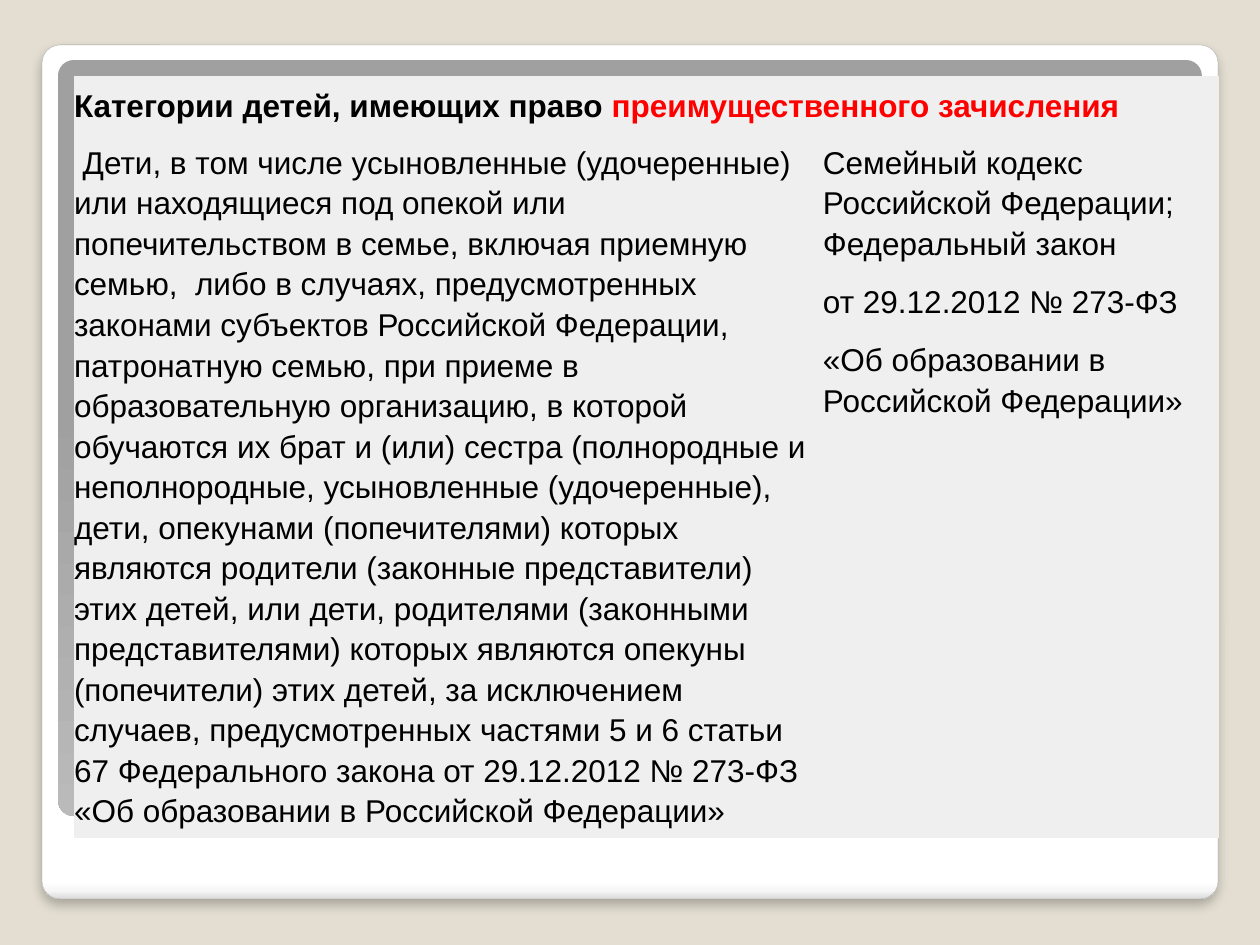
"""Build a slide with a framed table on preferential school enrolment."""
from dataclasses import dataclass

from lxml.etree import SubElement
from pptx import Presentation
from pptx.dml.color import RGBColor as RGB
from pptx.enum.shapes import MSO_SHAPE as Shape
from pptx.oxml.ns import qn
from pptx.util import Pt

SCALE = 914400 / 126
NO_GRID_STYLE = "{2D5ABB26-0587-4C30-8999-92F81FD0307C}"


@dataclass(frozen=True)
class Theme:
    background: str = "E3DED1"
    outline: str = "A4A4A4"
    cell: str = "EFEFEF"
    text: str = "000000"
    accent: str = "FF0000"
    shadow: str = "000000"
    font: str = "Arial"
    size: int = 18


THEME = Theme()


@dataclass(frozen=True)
class Panel:
    box: tuple[int, int, int, int]
    stops: tuple[tuple[int, str], ...]
    outlined: bool


@dataclass(frozen=True)
class Run:
    text: str
    color: str = THEME.text
    bold: bool = False


@dataclass(frozen=True)
class CellText:
    row: int
    col: int
    left: int
    right: int
    paragraphs: tuple[tuple[Run, ...], ...]


PANELS = (
    Panel((42, 45, 1176, 854),
          ((0, "FFFFFF"), (98, "FFFFFF"), (99, "F7F7F7"), (100, "DADADA")), True),
    Panel((58, 60, 1144, 756),
          ((0, "A0A0A0"), (50, "A2A2A2"), (100, "BABABA")), False),
)
TABLE_BOX = (74, 76, 1145, 757)
COLUMNS = (745, 400)
ROWS = (48, 641)
CELLS = (
    CellText(0, 0, 0, 0, ((
        Run("Категории детей, имеющих право ", bold=True),
        Run("преимущественного зачисления", THEME.accent, True)),)),
    CellText(1, 0, 0, 4, ((Run(
        " Дети, в том числе усыновленные (удочеренные) или находящиеся под опекой "
        "или попечительством в семье, включая приемную семью,  либо в случаях, "
        "предусмотренных законами субъектов Российской Федерации, патронатную "
        "семью, при приеме в образовательную организацию, в которой обучаются их "
        "брат и (или) сестра (полнородные и неполнородные, усыновленные "
        "(удочеренные), дети, опекунами (попечителями) которых являются родители "
        "(законные представители) этих детей, или дети, родителями (законными "
        "представителями) которых являются опекуны (попечители) этих детей, за "
        "исключением случаев, предусмотренных частями 5 и 6 статьи 67 "
        "Федерального закона от 29.12.2012 № 273-ФЗ «Об образовании в "
        "Российской Федерации»"),),)),
    CellText(1, 1, 4, 0, (
        (Run("Семейный кодекс Российской Федерации; Федеральный закон"),),
        (Run("от 29.12.2012 № 273-ФЗ"),),
        (Run("«Об образовании в Российской Федерации»"),))),
)


def px(length: int) -> int:
    """Turn pixels into EMU."""
    return round(length * SCALE)


def apply(target, values: dict) -> None:
    """Set each named attribute on the target."""
    for name, value in values.items():
        setattr(target, name, value)


def set_gradient(sp, stops: tuple[tuple[int, str], ...]) -> None:
    """Fill a shape from top to bottom with the given stops."""
    sp.fill.gradient()
    grad = sp._element.spPr.find(qn("a:gradFill"))
    for child in list(grad):
        grad.remove(child)
    gs_list = SubElement(grad, qn("a:gsLst"))
    for position, color in stops:
        gs = SubElement(gs_list, qn("a:gs"), pos=str(position * 1000))
        SubElement(gs, qn("a:srgbClr"), val=color)
    SubElement(grad, qn("a:lin"), ang="5400000", scaled="0")


def add_shadow(sp) -> None:
    """Give a shape a soft shadow below it."""
    effects = sp._element.spPr.find(qn("a:effectLst"))
    shadow = SubElement(effects, qn("a:outerShdw"), blurRad=str(Pt(6)),
                        dist=str(Pt(4)), dir="5400000", rotWithShape="0")
    color = SubElement(shadow, qn("a:srgbClr"), val=THEME.shadow)
    SubElement(color, qn("a:alpha"), val="25000")


def draw_panel(s, panel: Panel) -> None:
    """Draw one rounded panel."""
    sp = s.shapes.add_shape(Shape.ROUNDED_RECTANGLE, *map(px, panel.box))
    sp.adjustments[0] = 0.021
    sp.shadow.inherit = False
    set_gradient(sp, panel.stops)
    if panel.outlined:
        sp.line.color.rgb = RGB.from_string(THEME.outline)
        sp.line.width = Pt(0.16)
        add_shadow(sp)
    else:
        sp.line.fill.background()


def write_cell(cell, content: CellText) -> None:
    """Write formatted paragraphs into one table cell."""
    apply(cell, {"margin_left": px(content.left), "margin_right": px(content.right),
                 "margin_top": px(8), "margin_bottom": px(8)})
    tf = cell.text_frame
    for i, runs in enumerate(content.paragraphs):
        p = tf.add_paragraph() if i else tf.paragraphs[0]
        apply(p, {"line_spacing": 1.15, "space_after": Pt(10)})
        for run in runs:
            r = p.add_run()
            r.text = run.text
            apply(r.font, {"name": THEME.font, "size": Pt(THEME.size),
                           "bold": run.bold})
            r.font.color.rgb = RGB.from_string(run.color)


def draw_table(s) -> None:
    """Draw the table with its merged heading row."""
    table = s.shapes.add_table(len(ROWS), len(COLUMNS), *map(px, TABLE_BOX)).table
    apply(table, {"first_row": False, "horz_banding": False})
    table._tbl.tblPr.find(qn("a:tableStyleId")).text = NO_GRID_STYLE
    for column, width in zip(table.columns, COLUMNS):
        column.width = px(width)
    for row, height in zip(table.rows, ROWS):
        row.height = px(height)
    for cell in table.iter_cells():
        cell.fill.solid()
        cell.fill.fore_color.rgb = RGB.from_string(THEME.cell)
    table.cell(0, 0).merge(table.cell(0, 1))
    for content in CELLS:
        write_cell(table.cell(content.row, content.col), content)


def main() -> None:
    """Build and save the slide."""
    prs = Presentation()
    apply(prs, {"slide_width": px(1260), "slide_height": px(945)})
    s = prs.slides.add_slide(prs.slide_layouts[6])
    s.background.fill.solid()
    s.background.fill.fore_color.rgb = RGB.from_string(THEME.background)
    for panel in PANELS:
        draw_panel(s, panel)
    draw_table(s)
    prs.save("out.pptx")


if __name__ == "__main__":
    main()
